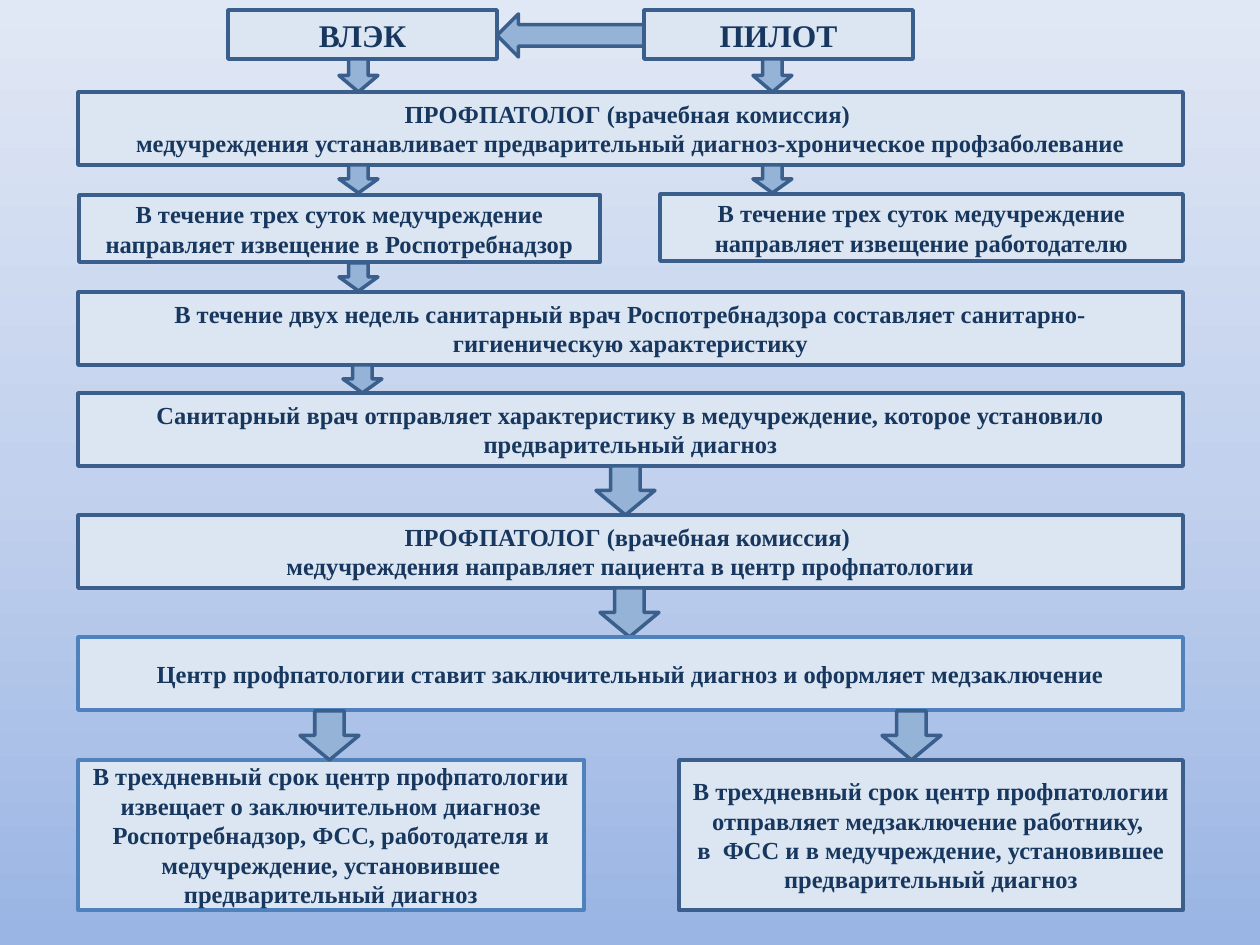
import pptx
import pptx.util
import pptx.dml.color
import pptx.enum.shapes
import pptx.enum.text
import pptx.oxml.ns
from lxml import etree

PX = 914400 // 126
SHAPE = pptx.enum.shapes.MSO_SHAPE
INK, PANEL, ARROW, EDGE, BRIGHT_EDGE = "17375E", "DCE6F2", "95B3D7", "3A5F8C", "4F81BD"
LEFT, WIDTH, STEP_HEIGHT = 78, 1105, 73
SMALL, LARGE = 39, 59  # widths of the down arrows


def colour(hex_code):
    return pptx.dml.color.RGBColor.from_string(hex_code)


def add_figure(slide, kind, box, fill, edge):
    figure = slide.shapes.add_shape(kind, *(n * PX for n in box))
    figure.shadow.inherit = False
    figure.fill.solid()
    figure.fill.fore_color.rgb = colour(fill)
    figure.line.color.rgb = colour(edge)
    figure.line.width = pptx.util.Pt(2)
    return figure


def add_step(slide, box, lines, size=14, edge=EDGE):
    step = add_figure(slide, SHAPE.FLOWCHART_PROCESS, box, PANEL, edge)
    frame = step.text_frame
    frame.word_wrap = True
    frame.vertical_anchor = pptx.enum.text.MSO_ANCHOR.MIDDLE
    for i, line in enumerate(lines):
        paragraph = frame.add_paragraph() if i else frame.paragraphs[0]
        paragraph.alignment = pptx.enum.text.PP_ALIGN.CENTER
        run = paragraph.add_run()
        run.text = line
        run.font.name = "Times New Roman"
        run.font.size = pptx.util.Pt(size)
        run.font.bold = True
        run.font.color.rgb = colour(INK)


def add_down_arrow(slide, left, top, width, height):
    add_figure(slide, SHAPE.DOWN_ARROW, (left, top, width, height), ARROW, EDGE)


def paint_background(slide, stops):
    fill = slide.background.fill
    fill.gradient()
    fill.gradient_angle = 90
    qn = pptx.oxml.ns.qn
    stop_list = next(slide.element.iter(qn("a:gsLst")))
    for old_stop in list(stop_list):
        stop_list.remove(old_stop)
    for percent, hex_code in stops:
        stop = etree.SubElement(stop_list, qn("a:gs"), pos=str(percent * 1000))
        etree.SubElement(stop, qn("a:srgbClr"), val=hex_code)


def add_participants(slide, left, top, width, height):
    """Two participants at the ends of the box, with an arrow between them."""
    name_width = 269
    pilot_left = left + width - name_width
    add_step(slide, (left, top, name_width, height), ["ВЛЭК"], size=18)
    add_step(slide, (pilot_left, top, name_width, height), ["ПИЛОТ"], size=18)
    gap_left = left + name_width
    add_figure(slide, SHAPE.LEFT_ARROW,
               (gap_left, top + 4, pilot_left - gap_left, 43), ARROW, EDGE)
    for offset in (111, 525):
        add_down_arrow(slide, left + offset, top + height, SMALL, 33)


def add_notices(slide, left, top, width, height):
    """Two notices side by side, with the arrows that lead to and from them."""
    add_step(slide, (left + width - 523, top, 523, height),
             ["В течение трех суток медучреждение направляет извещение работодателю"])
    add_step(slide, (left + 1, top + 1, 521, height),
             ["В течение трех суток медучреждение направляет извещение в Роспотребнадзор"])
    for offset, arrow_top in ((261, top - 29), (675, top - 29), (261, top + height + 2)):
        add_down_arrow(slide, left + offset, arrow_top, SMALL, 28)


def add_conclusions(slide, left, top, width, height):
    """Two final notices, each below its arrow."""
    add_step(slide, (left + width - 504, top, 504, height),
             ["В трехдневный срок центр профпатологии отправляет медзаключение работнику, ",
              "в  ФСС и в медучреждение, установившее предварительный диагноз"])
    add_step(slide, (left, top, 506, height),
             ["В трехдневный срок центр профпатологии извещает о заключительном диагнозе "
              "Роспотребнадзор, ФСС, работодателя и медучреждение, установившее "
              "предварительный диагноз"], edge=BRIGHT_EDGE)
    for offset in (222, 804):
        add_down_arrow(slide, left + offset, top - 49, LARGE, 49)


def add_full_steps(slide, left, width, height):
    """Full-width steps: top, edge, lines, and the arrow below if any."""
    steps = [
        (92, EDGE, ["ПРОФПАТОЛОГ (врачебная комиссия) ",
                    "медучреждения устанавливает предварительный "
                    "диагноз-хроническое профзаболевание"], None),
        (292, EDGE, ["В течение двух недель санитарный врач Роспотребнадзора "
                     "составляет санитарно-гигиеническую характеристику"], (265, SMALL, 28)),
        (393, EDGE, ["Санитарный врач отправляет характеристику в медучреждение, "
                     "которое установило предварительный диагноз"], (518, LARGE, 49)),
        (515, EDGE, ["ПРОФПАТОЛОГ (врачебная комиссия) ",
                     "медучреждения направляет пациента в центр профпатологии"],
         (522, LARGE, 49)),
        (637, BRIGHT_EDGE, ["Центр профпатологии ставит заключительный диагноз "
                            "и оформляет медзаключение"], None),
    ]
    for top, edge, lines, arrow in steps:
        add_step(slide, (left, top, width, height), lines, edge=edge)
        if arrow:
            offset, arrow_width, arrow_height = arrow
            add_down_arrow(slide, left + offset, top + height, arrow_width, arrow_height)


def main():
    deck = pptx.Presentation()
    deck.slide_width = pptx.util.Inches(10)
    deck.slide_height = pptx.util.Inches(7.5)
    slide = deck.slides.add_slide(deck.slide_layouts[6])
    paint_background(slide, [(0, "9AB5E4"), (50, "C2D1ED"), (100, "E1E8F5")])
    add_participants(slide, 228, 10, 685, 49)
    add_full_steps(slide, LEFT, WIDTH, STEP_HEIGHT)
    add_notices(slide, LEFT, 194, WIDTH, 67)
    add_conclusions(slide, LEFT, 760, WIDTH, 150)
    deck.save("out.pptx")


if __name__ == "__main__":
    main()
